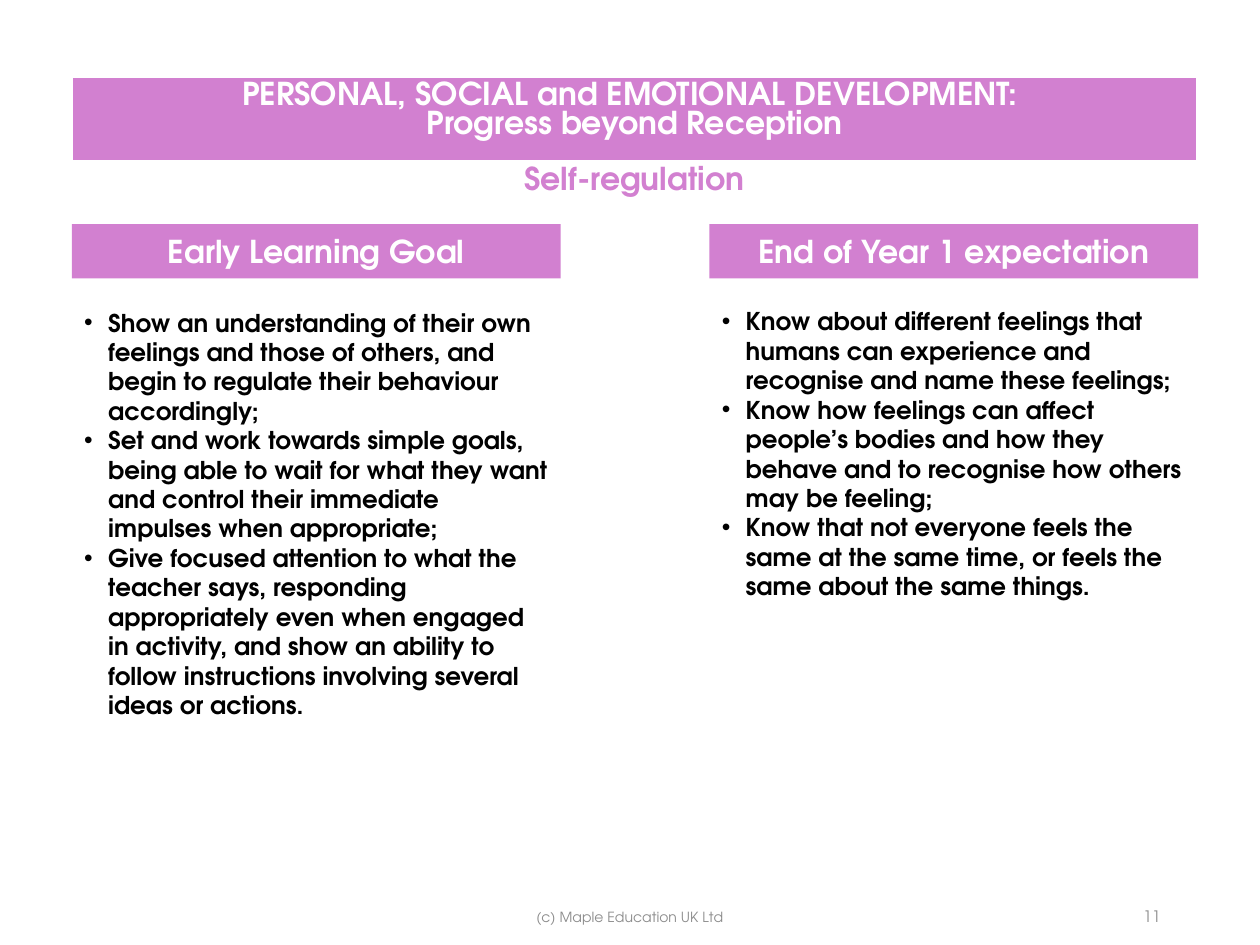
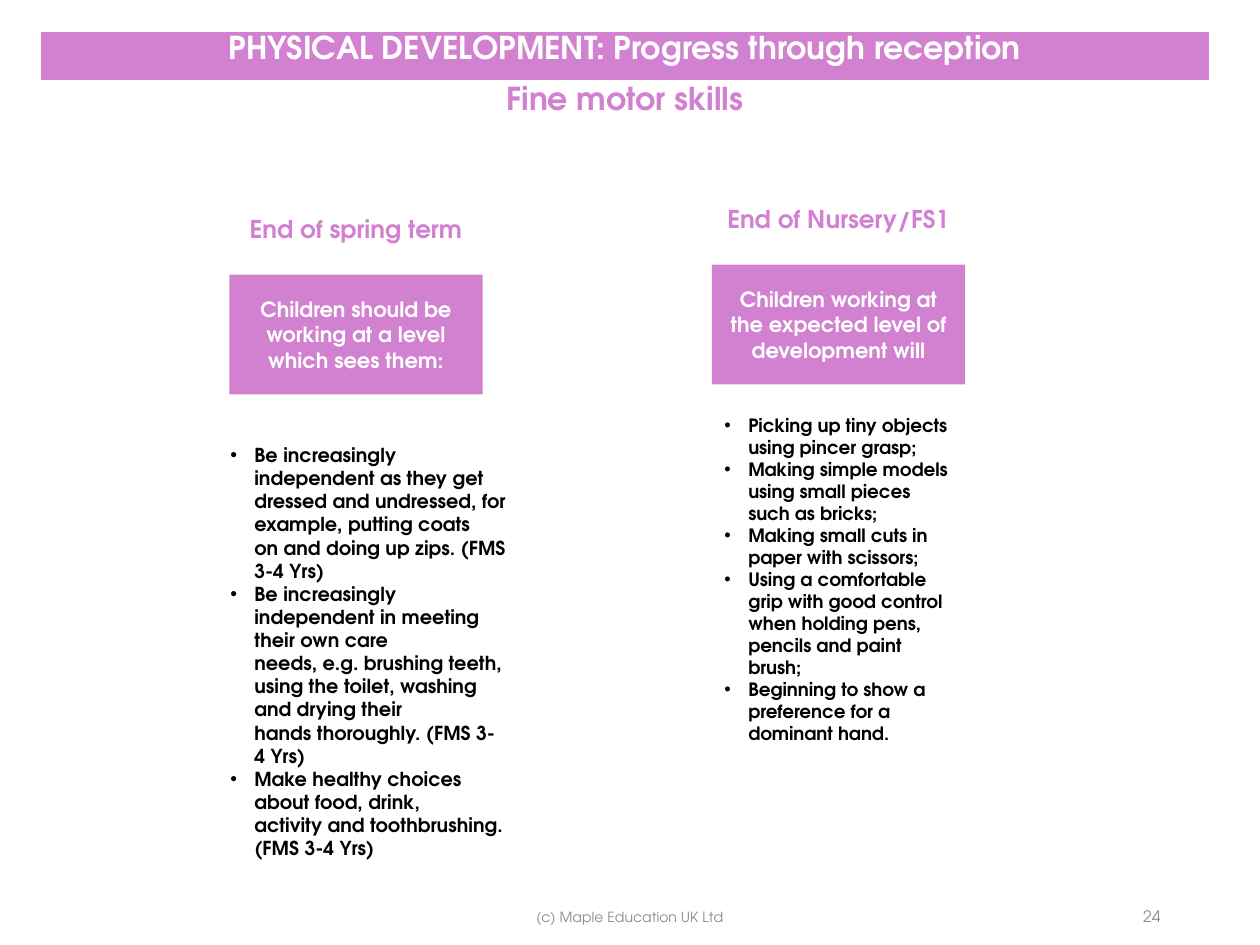
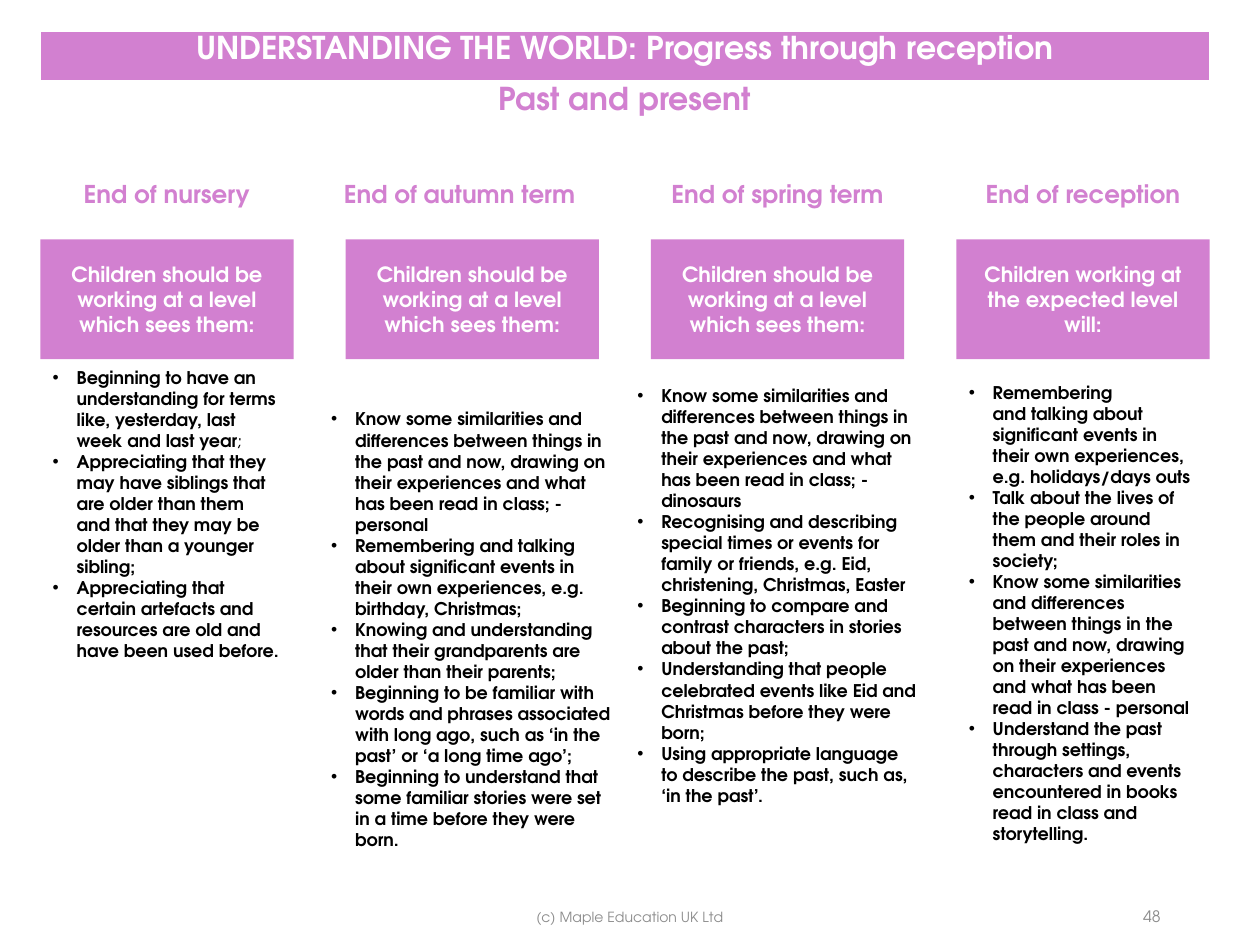
from dataclasses import dataclass
from typing import NamedTuple, Optional

from lxml import etree
from pptx import Presentation
from pptx import util as u
from pptx.dml import color
from pptx.enum import shapes, text
from pptx.oxml import ns

# Shared look
FONT = "TeX Gyre Adventor"
ORCHID, WHITE, BLACK, GREY = "D280D0", "FFFFFF", "000000", "8C8C8C"
HANG = u.Inches(0.19)
FOOTER = "(c) Maple Education UK Ltd"
HARD_SPACE = chr(160)  # written as ~ in the bullet texts

# Page grid: 100 columns by 100 rows
prs = Presentation()
prs.slide_width, prs.slide_height = u.Inches(10), u.Inches(7.5)
COL, ROW = prs.slide_width / 100, prs.slide_height / 100
BOX_W, BOX_H = 20.1, 12.67
HEADING_RISE, HEADING_H = 7.07, 4.53
TITLE_ROW_H = 5.4
PAGE_LEFT, PAGE_W = 3.2, 92.8


class Area(NamedTuple):
    left: float
    top: float
    width: float
    height: float

    def emu(self) -> tuple[int, ...]:
        return (round(self.left * COL), round(self.top * ROW),
                round(self.width * COL), round(self.height * ROW))


class Style(NamedTuple):
    size: float
    color: str
    bold: bool = True
    align: text.PP_ALIGN = text.PP_ALIGN.CENTER
    anchor: text.MSO_ANCHOR = text.MSO_ANCHOR.MIDDLE


TITLE = Style(18, WHITE)
SUBTITLE = Style(18, ORCHID)
INTRO = Style(12, WHITE)
HEADING = Style(14, ORCHID, anchor=text.MSO_ANCHOR.TOP)
FOOTNOTE = Style(8, GREY, bold=False)
PAGE_NUMBER = Style(9, GREY, bold=False, align=text.PP_ALIGN.RIGHT)


@dataclass
class Notes:
    area: Area
    size: float
    bullets: list[str]  # text after | is not bold


@dataclass
class Stage:
    left: float
    top: float
    heading: str
    intro: str
    notes: Notes
    heading_width: float = BOX_W


def rgb(value: str) -> color.RGBColor:
    return color.RGBColor.from_string(value)


def set_font(font, style: Style) -> None:
    font.name, font.size, font.bold = FONT, u.Pt(style.size), style.bold
    font.color.rgb = rgb(style.color)


def fill_frame(tf, lines: list[str], style: Style) -> None:
    tf.word_wrap = True
    for i, line in enumerate(lines):
        p = tf.paragraphs[0] if i == 0 else tf.add_paragraph()
        p.text = line
        p.alignment = style.align
        set_font(p.font, style)


def add_text(slide, area: Area, lines: list[str], style: Style,
             fill: Optional[str] = None):
    if fill:
        sp = slide.shapes.add_shape(shapes.MSO_SHAPE.RECTANGLE, *area.emu())
        sp.shadow.inherit = False
        sp.fill.solid()
        sp.fill.fore_color.rgb = rgb(fill)
        sp.line.fill.background()
    else:
        sp = slide.shapes.add_textbox(*area.emu())
    fill_frame(sp.text_frame, lines, style)
    sp.text_frame.vertical_anchor = style.anchor
    return sp


def add_notes(slide, notes: Notes) -> None:
    style = Style(notes.size, BLACK, align=text.PP_ALIGN.LEFT)
    parts = [b.replace("~", HARD_SPACE).partition("|") for b in notes.bullets]
    sp = add_text(slide, notes.area, [part[0] for part in parts], style)
    for p, (_, _, light) in zip(sp.text_frame.paragraphs, parts):
        pPr = p._p.get_or_add_pPr()
        pPr.set("marL", str(HANG))
        pPr.set("indent", str(-HANG))
        bullet_font = etree.Element(ns.qn("a:buFont"), typeface="Arial")
        bullet_char = etree.Element(ns.qn("a:buChar"), char="•")
        pPr.find(ns.qn("a:defRPr")).addprevious(bullet_font)
        bullet_font.addnext(bullet_char)
        if light:
            r = p.add_run()
            r.text = light
            set_font(r.font, style._replace(bold=False))


def add_border(cell, side: str, points: float) -> None:
    ln = etree.SubElement(cell._tc.get_or_add_tcPr(), ns.qn(f"a:ln{side}"),
                          w=str(u.Pt(points)))
    solid = etree.SubElement(ln, ns.qn("a:solidFill"))
    etree.SubElement(solid, ns.qn("a:srgbClr"), val=WHITE)


def add_title(slide, left: float, top: float, width: float,
              title: list[str], subtitle: str) -> None:
    area = Area(left, top, width, 2 * TITLE_ROW_H)
    table = slide.shapes.add_table(2, 1, *area.emu()).table
    table.first_row = table.horz_banding = False
    rows = [(title, TITLE, {"L": 1, "R": 1, "T": 1, "B": 3}),
            ([subtitle], SUBTITLE, {"L": 1, "R": 1, "T": 3, "B": 1})]
    for i, (lines, style, borders) in enumerate(rows):
        cell = table.cell(i, 0)
        cell.margin_top = cell.margin_bottom = u.Inches(0.04)
        for side, points in borders.items():
            add_border(cell, side, points)
        fill_frame(cell.text_frame, lines, style)
    band = table.cell(0, 0).fill
    band.solid()
    band.fore_color.rgb = rgb(ORCHID)
    table.cell(1, 0).fill.background()


def add_stage(slide, stage: Stage) -> None:
    heading_left = stage.left + BOX_W - stage.heading_width
    heading = add_text(slide, Area(heading_left, stage.top - HEADING_RISE,
                                   stage.heading_width, HEADING_H),
                       [stage.heading], HEADING)
    heading.text_frame.auto_size = text.MSO_AUTO_SIZE.SHAPE_TO_FIT_TEXT
    add_text(slide, Area(stage.left, stage.top, BOX_W, BOX_H),
             [stage.intro], INTRO, ORCHID)
    add_notes(slide, stage.notes)


def new_slide(number: int):
    slide = prs.slides.add_slide(prs.slide_layouts[6])
    add_text(slide, Area(33.1, 94.4, 33.8, 5.33), [FOOTER], FOOTNOTE)
    add_text(slide, Area(70.6, 94.27, 22.5, 5.33), [str(number)], PAGE_NUMBER)
    return slide


def add_stage_slide(number: int, title: str, subtitle: str,
                    stages: list[Stage]) -> None:
    slide = new_slide(number)
    add_title(slide, PAGE_LEFT, 3.33, PAGE_W, [title], subtitle)
    for stage in stages:
        add_stage(slide, stage)


SHOULD_BE = "Children should be working at a level which sees them:"

# Self-regulation
slide = new_slide(11)
add_title(slide, 5.7, 8.13, 89.3,
          ["PERSONAL, SOCIAL and EMOTIONAL DEVELOPMENT: ",
           "Progress beyond Reception"], "Self-regulation")
GOALS = [
    (5.7, "Early Learning Goal", 46, [
        "Show an understanding of their own feelings and those of others, and "
        "begin to regulate their behaviour accordingly;",
        "Set and work towards simple goals, being able to wait for what they "
        "want and control their immediate impulses when appropriate;",
        "Give focused attention to what the teacher says, responding "
        "appropriately even when engaged in activity, and show an ability to "
        "follow instructions involving several ideas or actions."]),
    (56.3, "End of Year 1 expectation", 33.33, [
        "Know about different feelings that humans can experience and "
        "recognise and name these feelings;",
        "Know how feelings can affect people’s bodies and how they behave and "
        "to recognise how others may be feeling;",
        "Know that not everyone feels the same at the same time, or feels the "
        "same about the same things."]),
]
for left, label, height, bullets in GOALS:
    add_text(slide, Area(left, 23.73, 38.8, 5.73), [label], TITLE, ORCHID)
    add_notes(slide, Notes(Area(left, 31.33, 38.8, height), 14, bullets))

# Fine motor skills
add_stage_slide(
    24, "PHYSICAL DEVELOPMENT: Progress through reception",
    "Fine motor skills", [
        Stage(18.2, 29.07, "End of spring term", SHOULD_BE,
              Notes(Area(17.3, 46.27, 23.9, 45.33), 11, [
                  "Be increasingly independent as they get dressed~and "
                  "undressed, for example, putting coats on~and doing up "
                  "zips. (FMS 3-4~Yrs)",
                  "Be increasingly independent in meeting their~own care "
                  "needs,~e.g.~brushing teeth, using the~toilet, washing and "
                  "drying their hands~thoroughly. (FMS 3-4~Yrs)",
                  "Make healthy choices about food, drink, activity~and "
                  "toothbrushing. (FMS 3-4~Yrs)"])),
        Stage(56.5, 28, "End of Nursery/FS1",
              "Children working at the expected level of development will",
              Notes(Area(56.5, 42.27, BOX_W, 38), 10.5, [
                  "Picking up tiny objects using pincer grasp;",
                  "Making simple models using small pieces such as bricks;",
                  "Making small cuts in paper with scissors;",
                  "Using a comfortable grip with good control when holding "
                  "pens, pencils and paint brush;",
                  "Beginning to show a preference for a dominant hand."])),
    ])

# Past and present
STAGE_STEP = (PAGE_W - BOX_W) / 3
lefts = [PAGE_LEFT + i * STAGE_STEP for i in range(4)]
STAGE_TOP = 25.33
SIMILARITIES = ("Know some similarities~and differences~between things in "
                "the~past and now, drawing~on their experiences~and what has "
                "been~read in class; - ")
add_stage_slide(
    48, "UNDERSTANDING THE WORLD: Progress through reception",
    "Past and present", [
        Stage(lefts[0], STAGE_TOP, "End of nursery", SHOULD_BE,
              Notes(Area(lefts[0], 38.13, BOX_W, 32.53), 10, [
                  "Beginning to have an understanding for terms like, "
                  "yesterday, last week and last year|;",
                  "Appreciating that they may have siblings that are older "
                  "than them and that they may be older than a younger "
                  "sibling;",
                  "Appreciating that certain artefacts and resources are old "
                  "and have been used before."])),
        Stage(lefts[1], STAGE_TOP, "End of autumn term", SHOULD_BE,
              Notes(Area(25.3, 40.4, 24.2, 52.4), 10, [
                  SIMILARITIES + "personal",
                  "Remembering and talking about significant events in their "
                  "own experiences, e.g. birthday, Christmas;",
                  "Knowing and understanding that their grandparents are "
                  "older than their parents;",
                  "Beginning to be familiar with words and phrases associated "
                  "with long ago, such as ‘in the past’ or ‘a long time ago’;",
                  "Beginning to understand that some familiar stories were "
                  "set in a time before they were born."]),
              heading_width=22.1),
        Stage(lefts[2], STAGE_TOP, "End of spring term", SHOULD_BE,
              Notes(Area(49.6, 40.4, 24.3, 45.2), 10, [
                  SIMILARITIES + "dinosaurs",
                  "Recognising and describing special times or events for "
                  "family or friends, e.g. Eid, christening, Christmas, "
                  "Easter",
                  "Beginning to compare and contrast characters in stories "
                  "about the past;",
                  "Understanding that people celebrated events like Eid and "
                  "Christmas before they were born;",
                  "Using appropriate language to describe the past, such as, "
                  "‘in the past’."])),
        Stage(lefts[3], STAGE_TOP, "End of reception",
              "Children working at the expected level will:",
              Notes(Area(lefts[3], 39.73, BOX_W, 50.27), 10, [
                  "Remembering and~talking about significant~events in their "
                  "own~experiences, e.g. holidays/days outs",
                  "Talk about the lives of the people around them and their "
                  "roles in society;",
                  "Know some similarities and differences between things in "
                  "the past and now, drawing on their experiences and what "
                  "has been read in class - personal",
                  "Understand the past through settings, characters and "
                  "events encountered in books read in class and "
                  "storytelling."])),
    ])

prs.save("out.pptx")
